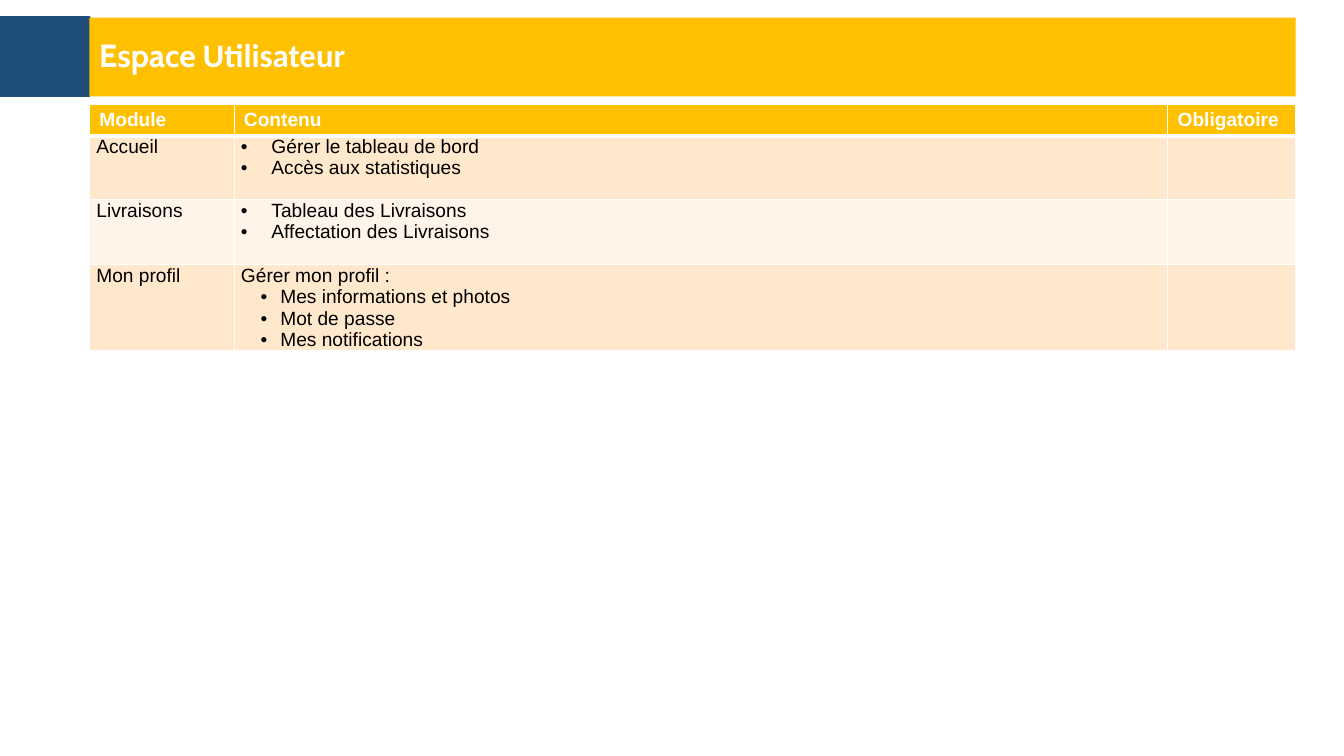
import dataclasses

import pptx
import pptx.dml.color
import pptx.enum.shapes
import pptx.enum.text
import pptx.oxml
import pptx.oxml.ns
import pptx.util


@dataclasses.dataclass(frozen=True)
class Theme:
    navy: str = "1F4E79"
    gold: str = "FFC000"
    white: str = "FFFFFF"
    black: str = "000000"
    bands: tuple = ("FFE8CC", "FFF4E7")
    title_font: str = "Cabin"
    title_word_font: str = "Calibri"
    body_font: str = "Arial"
    title_size: float = 23.4
    title_word_size: float = 24
    body_size: float = 14
    thin: float = 1
    thick: float = 3


def color(value):
    return pptx.dml.color.RGBColor.from_string(value)


class SlideBuilder:
    """Draw themed elements on a slide laid out as a grid of 1366 columns by 768 rows."""

    def __init__(self, presentation, theme, columns=1366, rows=768):
        self.theme = theme
        self.slide = presentation.slides.add_slide(presentation.slide_layouts[6])
        self.column = presentation.slide_width / columns
        self.row = presentation.slide_height / rows

    def across(self, columns):
        return round(columns * self.column)

    def down(self, rows):
        return round(rows * self.row)

    def place(self, left, top, width, height):
        return self.across(left), self.down(top), self.across(width), self.down(height)

    def rectangle(self, box, fill, line_width=0):
        shape = self.slide.shapes.add_shape(
            pptx.enum.shapes.MSO_SHAPE.RECTANGLE, *self.place(*box))
        shape.shadow.inherit = False
        shape.fill.solid()
        shape.fill.fore_color.rgb = color(fill)
        if line_width:
            shape.line.color.rgb = color(fill)
            shape.line.width = pptx.util.Pt(line_width)
        else:
            shape.line.fill.background()
        return shape

    def run(self, paragraph, text, font, size, ink, bold=False):
        run = paragraph.add_run()
        run.text = text
        run.font.name = font
        run.font.size = pptx.util.Pt(size)
        run.font.bold = bold
        run.font.color.rgb = color(ink)

    def title(self, box, pieces):
        frame = self.rectangle(box, self.theme.gold).text_frame
        frame.word_wrap = True
        frame.vertical_anchor = pptx.enum.text.MSO_ANCHOR.MIDDLE
        frame.margin_left = frame.margin_right = self.across(10)
        frame.margin_top = frame.margin_bottom = self.down(10)
        paragraph = frame.paragraphs[0]
        paragraph.alignment = pptx.enum.text.PP_ALIGN.LEFT
        paragraph.line_spacing = 0.9
        for text, font, size in pieces:
            self.run(paragraph, text, font, size, self.theme.white, True)

    def bullet(self, paragraph, indent, hanging):
        properties = paragraph._p.get_or_add_pPr()
        properties.set("marL", str(self.across(indent)))
        properties.set("indent", str(-self.across(hanging)))
        namespace = pptx.oxml.ns.nsdecls("a")
        for xml in (
            f'<a:buClr {namespace}><a:srgbClr val="{self.theme.black}"/></a:buClr>',
            f'<a:buFont {namespace} typeface="{self.theme.body_font}"/>',
            f'<a:buChar {namespace} char="•"/>',
        ):
            properties.append(pptx.oxml.parse_xml(xml))

    def borders(self, cell, top, bottom):
        namespace = pptx.oxml.ns.nsdecls("a")
        widths = {"L": self.theme.thin, "R": self.theme.thin, "T": top, "B": bottom}
        for side, width in widths.items():
            cell._tc.get_or_add_tcPr().append(pptx.oxml.parse_xml(
                f'<a:ln{side} {namespace} w="{pptx.util.Pt(width)}"><a:solidFill>'
                f'<a:srgbClr val="{self.theme.white}"/></a:solidFill></a:ln{side}>'))

    def cell(self, cell, lines, row):
        theme = self.theme
        header = row == 0
        self.borders(cell, theme.thick if row == 1 else theme.thin,
                     theme.thick if header else theme.thin)
        cell.fill.solid()
        cell.fill.fore_color.rgb = color(theme.gold if header else theme.bands[(row - 1) % 2])
        cell.margin_left = cell.margin_right = self.across(10 if header else 7)
        cell.margin_top = cell.margin_bottom = self.down(5 if header else 0)
        for index, (text, indents) in enumerate(lines):
            frame = cell.text_frame
            paragraph = frame.add_paragraph() if index else frame.paragraphs[0]
            if indents:
                self.bullet(paragraph, *indents)
            self.run(paragraph, text, theme.body_font, theme.body_size,
                     theme.white if header else theme.black, header)

    def table(self, left, top, widths, heights, content):
        box = self.place(left, top, sum(widths), sum(heights))
        table = self.slide.shapes.add_table(len(heights), len(widths), *box).table
        table.horz_banding = False
        for column, width in zip(table.columns, widths):
            column.width = self.across(width)
        for row, height in zip(table.rows, heights):
            row.height = self.down(height)
        for row, cells in enumerate(content):
            for column, lines in enumerate(cells):
                self.cell(table.cell(row, column), lines, row)


def plain(text):
    return [(text, None)]


def bullets(indents, *texts):
    return [(text, indents) for text in texts]


def main():
    presentation = pptx.Presentation()
    presentation.slide_width = pptx.util.Inches(13.66)
    presentation.slide_height = pptx.util.Inches(7.68)
    theme = Theme()
    builder = SlideBuilder(presentation, theme)
    margin = 91
    builder.rectangle((0, 18, margin, 79), theme.navy, 2)
    builder.title((margin, 18, 1226, 80), [
        ("Espace ", theme.title_font, theme.title_size),
        ("Utilisateur", theme.title_word_font, theme.title_word_size),
    ])
    wide, narrow = (31, 31), (40, 20)
    modules = [
        [plain("Module"), plain("Contenu"), plain("Obligatoire")],
        [plain("Accueil"),
         bullets(wide, "Gérer le tableau de bord", "Accès aux statistiques"), []],
        [plain("Livraisons"),
         bullets(wide, "Tableau des Livraisons", "Affectation des Livraisons"), []],
        [plain("Mon profil"),
         plain("Gérer mon profil :") + bullets(
             narrow, "Mes informations et photos", "Mot de passe", "Mes notifications"), []],
    ]
    builder.table(margin, 106, (147, 949, 130), (32, 65, 66, 87), modules)
    presentation.save("out.pptx")


if __name__ == "__main__":
    main()
